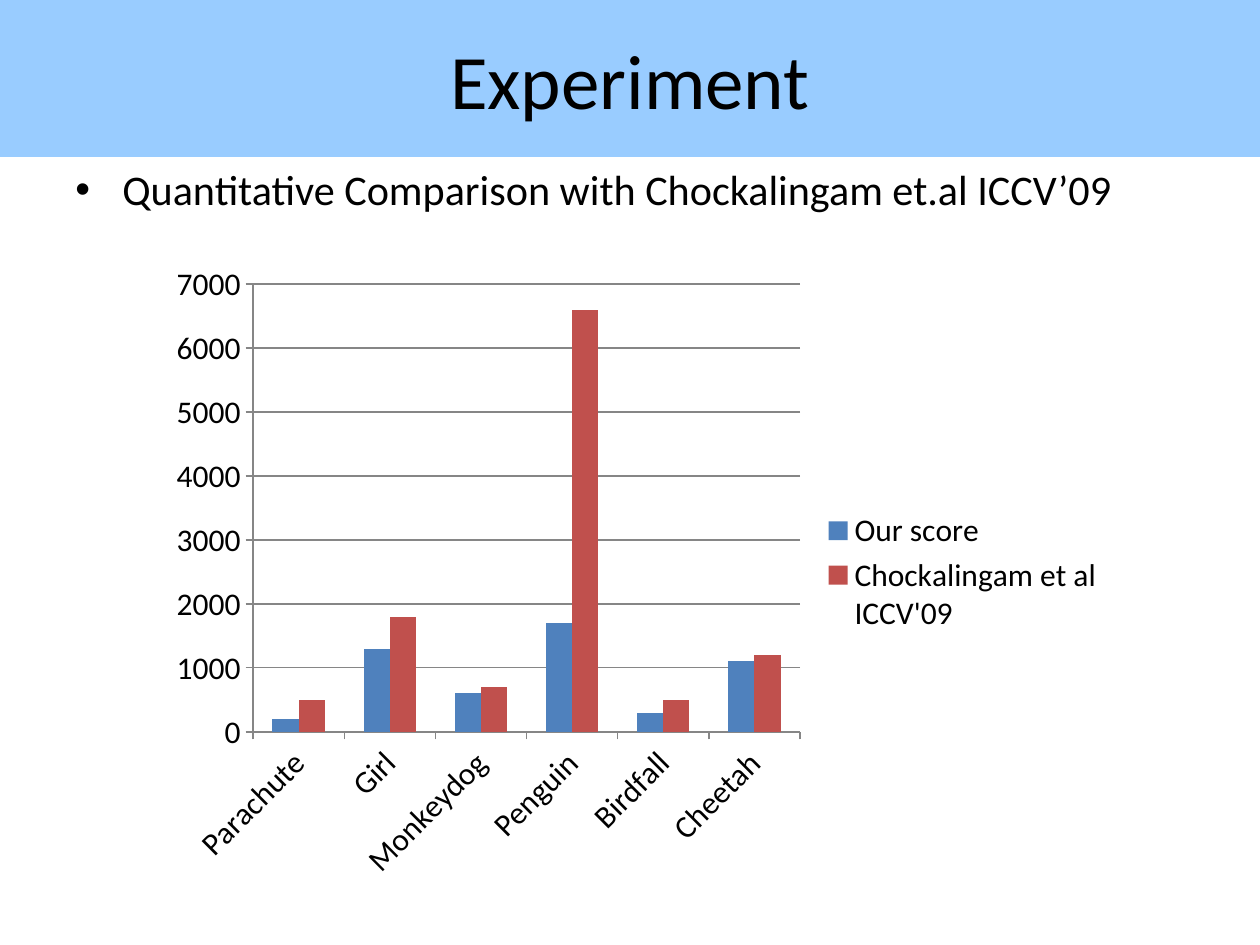
from lxml import etree
from pptx import Presentation
from pptx import util as u
from pptx.chart.data import CategoryChartData
from pptx.dml.color import RGBColor
from pptx.enum import chart as charts, shapes, text
from pptx.oxml import parse_xml
from pptx.oxml.ns import nsdecls, qn

PX = 914400 / 126
FONT = "Calibri"
BLACK, GRID, BANNER = "000000", "868686", "99CCFF"
VIDEOS = ["Parachute", "Girl", "Monkeydog", "Penguin", "Birdfall", "Cheetah"]
SCORES = [
    ("Our score", "4F81BD", [200, 1300, 600, 1700, 300, 1100]),
    ("Chockalingam et al ICCV'09", "C0504D", [500, 1800, 700, 6600, 500, 1200]),
]


def px(*lengths):
    return [u.Emu(round(length * PX)) for length in lengths]


def paint(color_format, value):
    color_format.rgb = RGBColor.from_string(value)


def style_font(font, size):
    font.name, font.size = FONT, u.Pt(size)
    paint(font.color, BLACK)


def add_banner(page, title):
    box = page.shapes.add_shape(shapes.MSO_SHAPE.RECTANGLE, *px(0, 0, 1260, 157))
    box.shadow.inherit = False
    box.fill.solid()
    paint(box.fill.fore_color, BANNER)
    box.line.fill.background()
    frame = box.text_frame
    frame.text = title
    frame.vertical_anchor = text.MSO_ANCHOR.MIDDLE
    para = frame.paragraphs[0]
    para.alignment = text.PP_ALIGN.CENTER
    style_font(para.runs[0].font, 44)


def add_bullet(page, wording):
    box = page.shapes.add_textbox(*px(63, 157, 1134, 105))
    frame = box.text_frame
    frame.word_wrap = True
    frame.text = wording
    para = frame.paragraphs[0]
    para.space_before = u.Pt(5)
    style_font(para.runs[0].font, 24.1)
    # Hanging bullet
    properties = para._p.get_or_add_pPr()
    indent = px(47)[0]
    properties.set("marL", str(indent))
    properties.set("indent", str(-indent))
    etree.SubElement(properties, qn("a:buFont")).set("typeface", "Arial")
    etree.SubElement(properties, qn("a:buChar")).set("char", "•")


def style_axis(axis):
    axis.major_tick_mark = charts.XL_TICK_MARK.OUTSIDE
    axis.minor_tick_mark = charts.XL_TICK_MARK.NONE
    paint(axis.format.line.color, GRID)
    style_font(axis.tick_labels.font, 18)


def place_plot(chart, **fractions):
    parts = "".join(f'<c:{key} val="{value}"/>' for key, value in fractions.items())
    layout = parse_xml(
        f'<c:layout {nsdecls("c")}><c:manualLayout><c:layoutTarget val="inner"/>'
        f'<c:xMode val="edge"/><c:yMode val="edge"/>{parts}'
        "</c:manualLayout></c:layout>")
    area = chart._chartSpace.find(".//" + qn("c:plotArea"))
    for old in area.findall(qn("c:layout")):
        area.remove(old)
    area.insert(0, layout)


def add_score_chart(page):
    data = CategoryChartData()
    data.categories = VIDEOS
    for name, _, values in SCORES:
        data.add_series(name, values)
    chart = page.shapes.add_chart(
        charts.XL_CHART_TYPE.COLUMN_CLUSTERED, *px(157, 252, 960, 640), data).chart
    chart.has_title = False
    style_font(chart.font, 18)
    place_plot(chart, x=0.1, y=0.05, w=0.57, h=0.7)

    # Columns
    plot = chart.plots[0]
    plot.gap_width, plot.overlap, plot.vary_by_categories = 150, 0, False
    for series, (_, color, _) in zip(plot.series, SCORES):
        series.format.fill.solid()
        paint(series.format.fill.fore_color, color)

    # Axes, with slanted category names
    for axis in (chart.category_axis, chart.value_axis):
        style_axis(axis)
    slant = chart.category_axis._element.find(qn("c:txPr")).find(qn("a:bodyPr"))
    slant.set("rot", str(-45 * 60000))
    slant.set("vert", "horz")
    scale = chart.value_axis
    scale.minimum_scale, scale.maximum_scale, scale.major_unit = 0, 7000, 1000
    scale.has_major_gridlines = True
    paint(scale.major_gridlines.format.line.color, GRID)

    # Legend
    chart.has_legend = True
    chart.legend.position = charts.XL_LEGEND_POSITION.RIGHT
    chart.legend.include_in_layout = False
    style_font(chart.legend.font, 18)


def main():
    deck = Presentation()
    deck.slide_width, deck.slide_height = px(1260, 945)
    page = deck.slides.add_slide(deck.slide_layouts[6])
    add_banner(page, "Experiment")
    add_bullet(page, "Quantitative Comparison with Chockalingam et.al ICCV’09")
    add_score_chart(page)
    deck.save("out.pptx")


if __name__ == "__main__":
    main()
